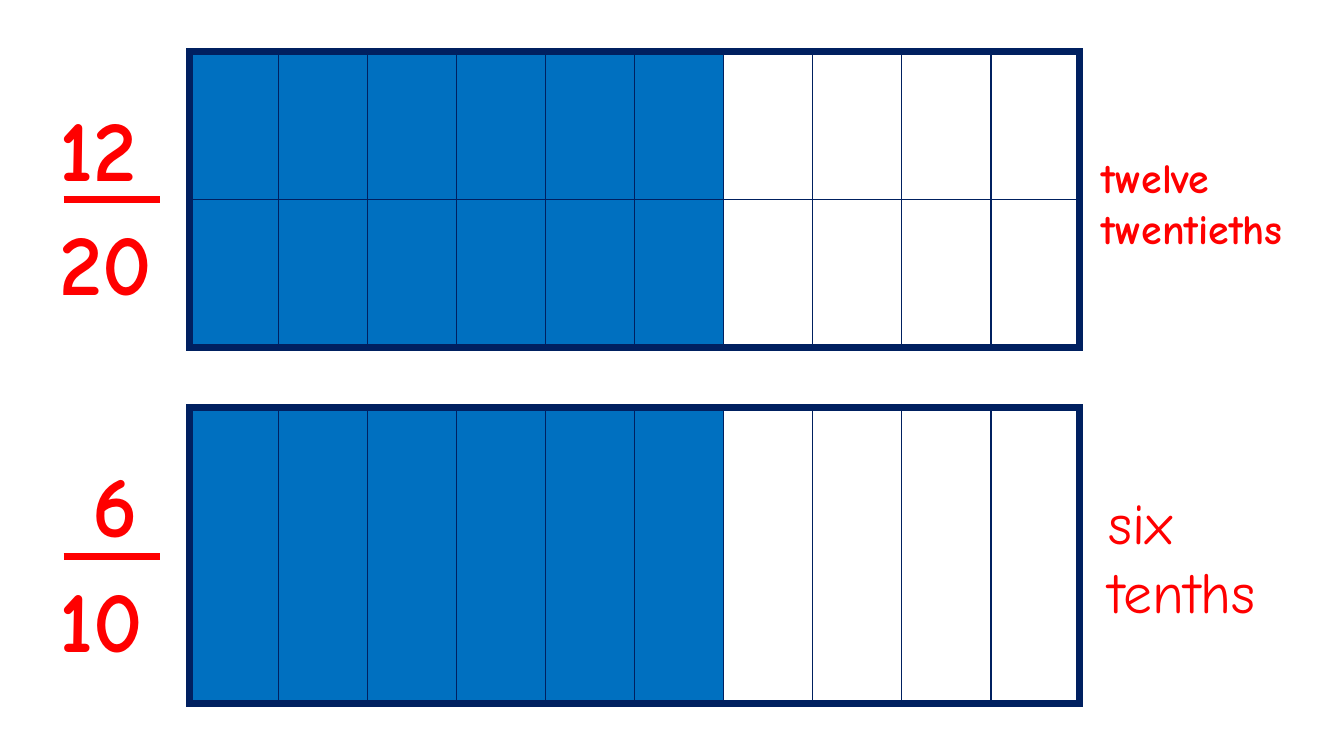
import pptx
import pptx.dml.color
import pptx.enum.shapes
import pptx.enum.text
import pptx.util
from lxml import etree
from pptx.oxml.ns import qn
from pptx.util import Inches

BAR_LEFT, BAR_WIDTH, BAR_HEIGHT = 1.88, 8.83, 2.94
COLUMNS, SHADED_COLUMNS = 10, 6


def color(hex_string):
    return pptx.dml.color.RGBColor.from_string(hex_string)


class FractionSlide:
    font = "Comic Neue"
    red, blue, navy = "FF0000", "0070C0", "002060"

    def __init__(self, presentation):
        self.slide = presentation.slides.add_slide(presentation.slide_layouts[6])

    def rectangle(self, left, top, width, height, fill=None, line_width=None):
        shape = self.slide.shapes.add_shape(
            pptx.enum.shapes.MSO_SHAPE.RECTANGLE,
            Inches(left), Inches(top), Inches(width), Inches(height))
        shape.shadow.inherit = False
        if fill:
            shape.fill.solid()
            shape.fill.fore_color.rgb = color(fill)
        else:
            shape.fill.background()
        if line_width:
            shape.line.color.rgb = color(self.navy)
            shape.line.width = pptx.util.Pt(line_width)
            outline = shape.line._get_or_add_ln()
            etree.SubElement(outline, qn("a:miter"), lim="800000")
        else:
            shape.line.fill.background()

    def text(self, left, top, width, height, words, size, bold=True, wrap=True):
        shape = self.slide.shapes.add_textbox(
            Inches(left), Inches(top), Inches(width), Inches(height))
        frame = shape.text_frame
        frame.word_wrap = wrap
        frame.auto_size = pptx.enum.text.MSO_AUTO_SIZE.SHAPE_TO_FIT_TEXT
        run = frame.paragraphs[0].add_run()
        run.text = words
        run.font.name = self.font
        run.font.size = pptx.util.Pt(size)
        run.font.bold = bold
        run.font.color.rgb = color(self.red)

    def fraction_line(self, middle):
        connector = self.slide.shapes.add_connector(
            pptx.enum.shapes.MSO_CONNECTOR.STRAIGHT,
            Inches(0.63), Inches(middle), Inches(1.59), Inches(middle))
        connector.line.color.rgb = color(self.red)
        connector.line.width = pptx.util.Pt(5)
        etree.SubElement(connector._element.spPr, qn("a:effectLst"))

    def fraction(self, middle, numerator, denominator, numerator_left, numerator_width):
        """Stack two numbers around a line at the height of middle."""
        self.text(numerator_left, middle - 1.09, numerator_width, 1.14,
                  numerator, 61.7, wrap=False)
        self.fraction_line(middle)
        self.text(0.49, middle + 0.05, 1.26, 1.14, denominator, 61.7, wrap=False)

    def bar(self, top, rows):
        """Draw the shaded cells, the thick frame, then the cell outlines."""
        width, height = BAR_WIDTH / COLUMNS, BAR_HEIGHT / rows
        cells = [(column, BAR_LEFT + column * width, top + row * height)
                 for row in range(rows) for column in range(COLUMNS)]
        for column, left, cell_top in cells:
            if column < SHADED_COLUMNS:
                self.rectangle(left, cell_top, width, height, fill=self.blue)
        self.rectangle(BAR_LEFT, top, BAR_WIDTH, BAR_HEIGHT, line_width=5)
        for column, left, cell_top in cells:
            self.rectangle(left, cell_top, width, height, line_width=1)


def main():
    presentation = pptx.Presentation()
    presentation.slide_width = Inches(13.33)
    presentation.slide_height = Inches(7.5)
    slide = FractionSlide(presentation)

    slide.bar(0.51, rows=2)
    slide.fraction(1.98, "12", "20", numerator_left=0.49, numerator_width=1.26)
    slide.text(10.83, 1.46, 2.5, 1.11, "twelve twentieths", 29.9)

    slide.bar(4.04, rows=1)
    slide.fraction(5.52, "6", "10", numerator_left=0.82, numerator_width=0.73)
    slide.text(10.9, 4.78, 2.13, 1.49, "six tenths", 41.1, bold=False)

    presentation.save("out.pptx")


if __name__ == "__main__":
    main()
